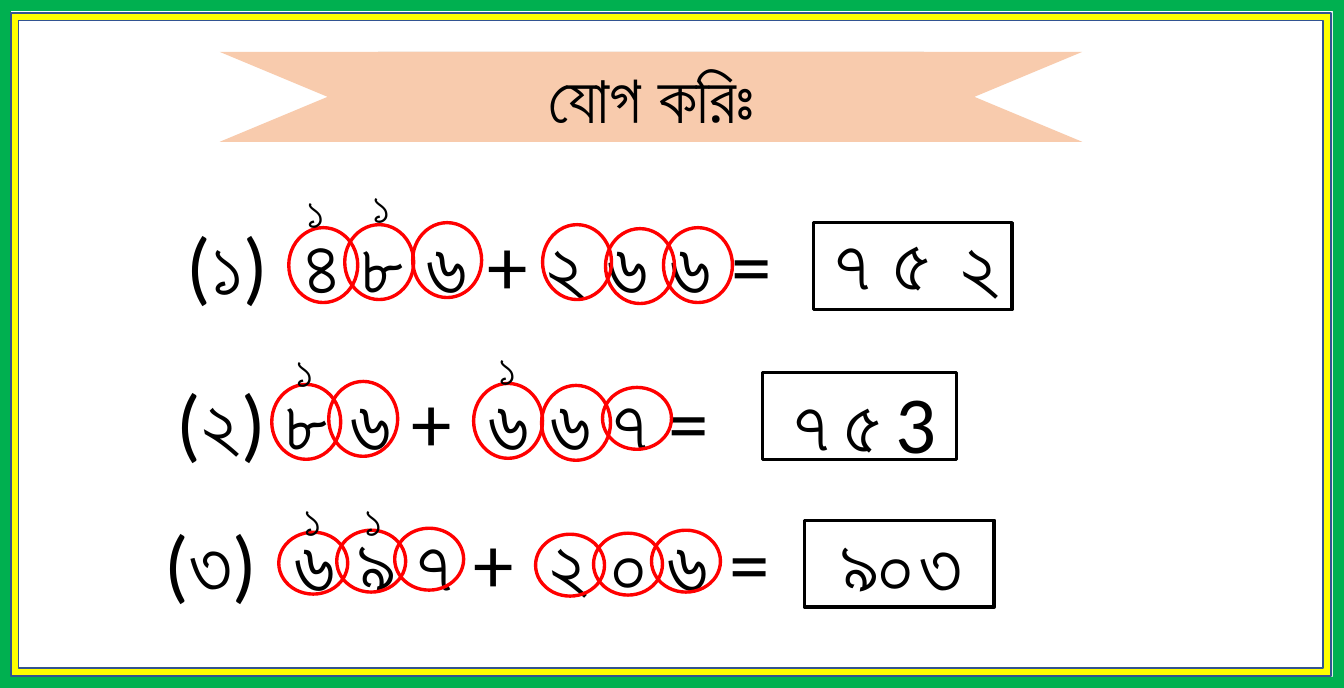
from dataclasses import dataclass

from lxml.etree import SubElement
from pptx import Presentation
from pptx.dml.color import RGBColor
from pptx.enum.shapes import MSO_SHAPE
from pptx.enum.text import MSO_ANCHOR, MSO_AUTO_SIZE, PP_ALIGN
from pptx.oxml.ns import qn
from pptx.util import Pt

TITLE = "যোগ করিঃ"
RIBBON = (220, 52, 863, 90)

# Lengths are px. Tabs count from the start of the text.
# digits: (digit, left, top, width); circles: (left, top); carries: (left, top)
PROBLEMS = [
    {
        "equation": "(১)\t৪ ৮ ৬ + ২ ৬ ৬ =",
        "place": (179, 211, 672, 106),
        "tabs": [117],
        "answer_box": (814, 223, 199, 87),
        "digits": [("৭", 813, 208, 81), ("৫", 872, 207, 82), ("২", 941, 210, 81)],
        "circle_heights": [75] * 6,
        "circles": [(289, 228), (345, 225), (413, 223),
                    (543, 225), (606, 229), (664, 228)],
        "carries": [(295, 180), (361, 175)],
    },
    {
        "equation": "(২) ৮ ৬ +\t৬ ৬ ৭ =",
        "place": (169, 368, 629, 106),
        "tabs": [311],
        "answer_box": (763, 373, 194, 87),
        "digits": [("৭", 772, 369, 81), ("৫", 823, 369, 81), ("3", 876, 369, 81)],
        "circle_heights": [75, 75, 75, 75, 62],
        "circles": [(272, 385), (329, 382), (474, 384), (542, 386), (603, 388)],
        "carries": [(284, 339), (487, 337)],
    },
    {
        "equation": "(৩)\t৬ ৯ ৭ +\t২ ০ ৬ =",
        "place": (157, 509, 765, 106),
        "tabs": [129, 385],
        "answer_box": (805, 521, 190, 87),
        "digits": [("৯", 832, 510, 47), ("০", 867, 510, 59), ("৩", 901, 510, 81)],
        "circle_heights": [62] * 6,
        "circles": [(279, 533), (337, 531), (395, 529),
                    (536, 535), (594, 534), (652, 531)],
        "carries": [(292, 488), (353, 488)],
    },
]

PX = 11289  # EMU in one px, 81 px to the inch
SLIDE_SIZE = (1345, 689)
DIGIT_HEIGHT = 106
CIRCLE_WIDTH = 69
CARRY_SIZE = (41, 62)


@dataclass(frozen=True)
class Theme:
    font: str = "Calibri"
    title_size: int = 60
    equation_size: int = 72
    carry_size: int = 40
    text: str = "000000"
    circle: str = "FF0000"
    ribbon: str = "F8CBAD"
    outer_frame: str = "00B050"
    inner_frame: str = "FFFF00"
    frame_line: str = "325491"


THEME = Theme()


def emu(lengths):
    return [length * PX for length in lengths]


def add_outline(slide, kind, place, fill=None, line=None, width=1, adjustments=()):
    """Add a preset shape without shadow; a missing colour means none."""
    shape = slide.shapes.add_shape(kind, *emu(place))
    shape.shadow.inherit = False
    for index, value in enumerate(adjustments):
        shape.adjustments[index] = value
    if fill:
        shape.fill.solid()
        shape.fill.fore_color.rgb = RGBColor.from_string(fill)
    else:
        shape.fill.background()
    if line:
        shape.line.color.rgb = RGBColor.from_string(line)
        shape.line.width = Pt(width)
    else:
        shape.line.fill.background()


def write(frame, text, size, align, tabs=()):
    frame.word_wrap = True
    paragraph = frame.paragraphs[0]
    paragraph.text = text
    paragraph.alignment = align
    if tabs:
        tab_list = SubElement(paragraph._p.get_or_add_pPr(), qn("a:tabLst"))
        for position in tabs:
            SubElement(tab_list, qn("a:tab"), pos=str(position * PX), algn="l")
    paragraph.font.name = THEME.font
    paragraph.font.size = Pt(size)
    paragraph.font.color.rgb = RGBColor.from_string(THEME.text)


def add_text(slide, place, text, size, align=PP_ALIGN.CENTER, tabs=()):
    frame = slide.shapes.add_textbox(*emu(place)).text_frame
    write(frame, text, size, align, tabs)
    frame.auto_size = MSO_AUTO_SIZE.SHAPE_TO_FIT_TEXT


def add_heading(slide):
    add_outline(slide, MSO_SHAPE.CURVED_DOWN_RIBBON, RIBBON, THEME.ribbon,
                adjustments=(0, 0.633, 0))
    title = slide.shapes.title
    slide.shapes.element.append(title.element)  # in front of the ribbon
    title.left, title.top, title.width, title.height = emu(RIBBON)
    write(title.text_frame, TITLE, THEME.title_size, PP_ALIGN.CENTER)
    title.text_frame.auto_size = MSO_AUTO_SIZE.NONE
    title.text_frame.vertical_anchor = MSO_ANCHOR.MIDDLE


def add_problem(slide, problem):
    add_text(slide, problem["place"], problem["equation"], THEME.equation_size,
             PP_ALIGN.LEFT, problem["tabs"])
    add_outline(slide, MSO_SHAPE.RECTANGLE, problem["answer_box"],
                line=THEME.text, width=3)
    for digit, left, top, width in problem["digits"]:
        add_text(slide, (left, top, width, DIGIT_HEIGHT), digit, THEME.equation_size)
    for (left, top), height in zip(problem["circles"], problem["circle_heights"]):
        add_outline(slide, MSO_SHAPE.OVAL, (left, top, CIRCLE_WIDTH, height),
                    line=THEME.circle, width=3)
    for corner in problem["carries"]:
        add_text(slide, corner + CARRY_SIZE, "১", THEME.carry_size)


def main():
    presentation = Presentation()
    presentation.slide_width, presentation.slide_height = emu(SLIDE_SIZE)
    slide = presentation.slides.add_slide(presentation.slide_layouts[5])
    add_outline(slide, MSO_SHAPE.FRAME, (0, 0, *SLIDE_SIZE), THEME.outer_frame,
                adjustments=[0.016])
    add_outline(slide, MSO_SHAPE.FRAME, (11, 13, 1321, 664), THEME.inner_frame,
                THEME.frame_line, adjustments=[0.012])
    add_heading(slide)
    for problem in PROBLEMS:
        add_problem(slide, problem)
    presentation.save("out.pptx")


if __name__ == "__main__":
    main()
